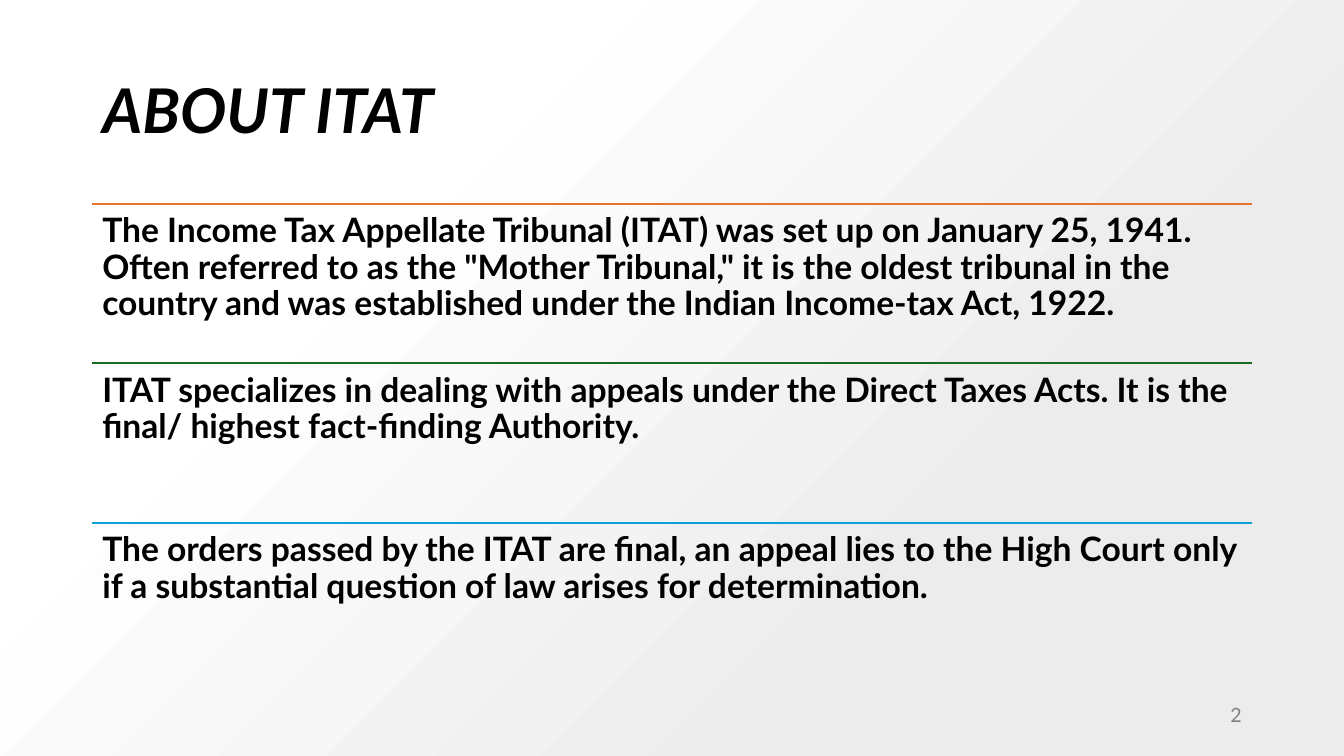
from lxml.etree import SubElement
from pptx import Presentation
from pptx.dml.color import RGBColor
from pptx.enum.shapes import MSO_CONNECTOR as Connector, MSO_SHAPE as Shape
from pptx.enum.text import MSO_ANCHOR as Anchor, PP_ALIGN as Align
from pptx.oxml.ns import qn
from pptx.util import Pt

COLORS = {"white": "FFFFFF", "mist": "ECECEC", "black": "000000", "gray": "808080",
          "orange": "E97132", "green": "196B24", "blue": "0F9ED5"}
TITLE = "ABOUT ITAT"
PAGE_NUMBER = "2"
FACTS = [
    ("orange", 'The Income Tax Appellate Tribunal (ITAT) was set up on January 25, 1941. '
               'Often referred to as the "Mother Tribunal," it is the oldest tribunal in the '
               'country and was established under the Indian Income-tax Act, 1922.'),
    ("green", "ITAT specializes in dealing with appeals under the Direct Taxes Acts. "
              "It is the final/ highest fact-finding Authority."),
    ("blue", "The orders passed by the ITAT are final, an appeal lies to the High Court only "
             "if a substantial question of law arises for determination."),
]
FORMATS = {
    "title": {"size": Pt(44), "bold": True, "italic": True},
    "fact": {"size": Pt(24), "bold": True},
    "number": {"size": Pt(14)},
}
SLIDE_WIDTH, SLIDE_HEIGHT = 960, 540
LEFT, WIDTH = 66, 828
FACTS_TOP, FACT_HEIGHT = 145.5, 114
GRADIENT = [("white", 0.26), ("mist", 0.72)]


def rgb(name):
    """Return the named colour."""
    return RGBColor.from_string(COLORS[name])


def add_background(slide):
    """Cover the slide with a diagonal gradient."""
    shape = slide.shapes.add_shape(Shape.RECTANGLE, 0, 0, Pt(SLIDE_WIDTH), Pt(SLIDE_HEIGHT))
    shape.shadow.inherit = False
    shape.line.fill.background()
    shape.fill.gradient()
    shape.fill.gradient_angle = 315
    for stop, (color, position) in zip(shape.fill.gradient_stops, GRADIENT):
        stop.color.rgb = rgb(color)
        stop.position = position


def add_text(slide, text, box, style, color="black", anchor=Anchor.TOP, inset=3.6, **layout):
    """Add a one-paragraph text box."""
    shape = slide.shapes.add_textbox(*map(Pt, box))
    frame = shape.text_frame
    frame_format = {"word_wrap": True, "vertical_anchor": anchor,
                    "margin_top": Pt(inset), "margin_bottom": Pt(inset)}
    for name, value in frame_format.items():
        setattr(frame, name, value)
    paragraph = frame.paragraphs[0]
    for name, value in layout.items():
        setattr(paragraph, name, value)
    run = paragraph.add_run()
    run.text = text
    for name, value in {"name": "Lato", **FORMATS[style]}.items():
        setattr(run.font, name, value)
    run.font.color.rgb = rgb(color)


def add_rule(slide, top, color):
    """Draw a coloured rule above a fact."""
    rule = slide.shapes.add_connector(Connector.STRAIGHT, Pt(LEFT), Pt(top),
                                      Pt(LEFT + WIDTH), Pt(top))
    rule.line.color.rgb = rgb(color)
    rule.line.width = Pt(1.5)
    SubElement(rule._element.spPr, qn("a:effectLst"))


def main():
    """Build and save the slide."""
    presentation = Presentation()
    presentation.slide_width, presentation.slide_height = Pt(SLIDE_WIDTH), Pt(SLIDE_HEIGHT)
    slide = presentation.slides.add_slide(presentation.slide_layouts[6])
    add_background(slide)
    add_text(slide, TITLE, (LEFT, 28.75, WIDTH, 104.4), "title",
             anchor=Anchor.MIDDLE, line_spacing=0.9)
    for index, (color, fact) in enumerate(FACTS):
        top = FACTS_TOP + index * FACT_HEIGHT
        add_rule(slide, top, color)
        add_text(slide, fact, (LEFT, top, WIDTH, FACT_HEIGHT), "fact",
                 inset=7.2, line_spacing=0.9)
    add_text(slide, PAGE_NUMBER, (865.5, 492, 28.5, 37.5), "number", color="gray",
             anchor=Anchor.MIDDLE, alignment=Align.RIGHT, space_after=Pt(6))
    presentation.save("out.pptx")


if __name__ == "__main__":
    main()
